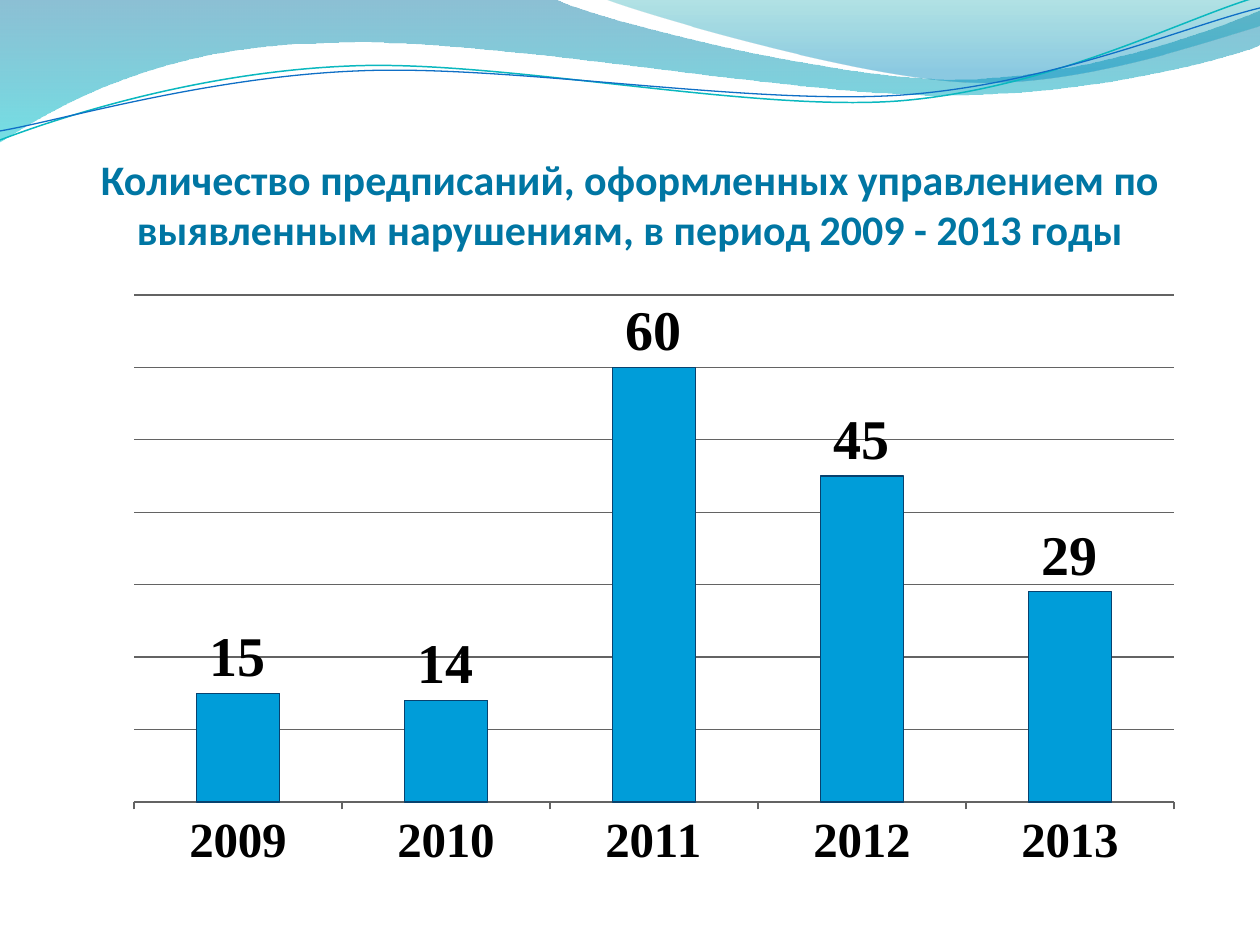
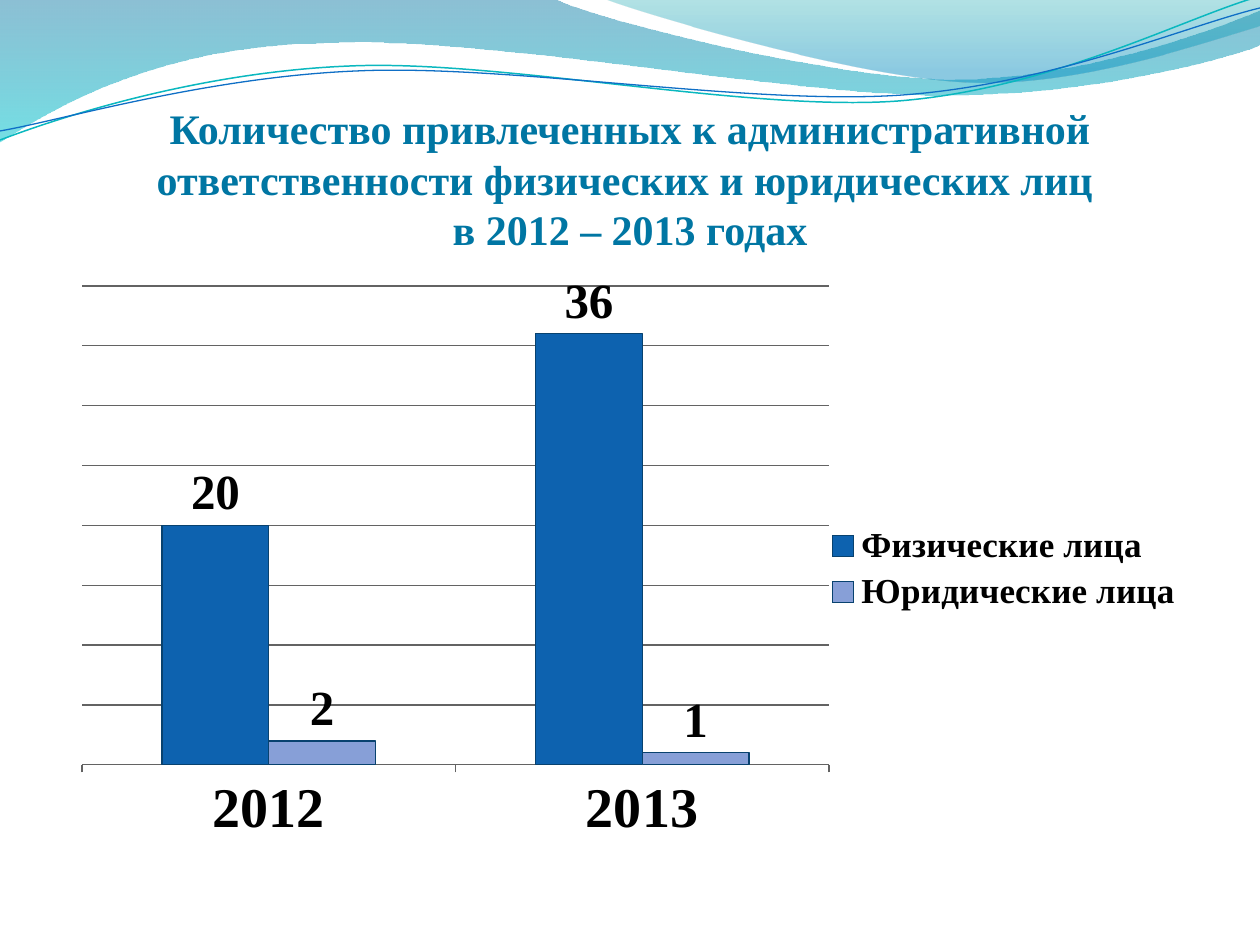
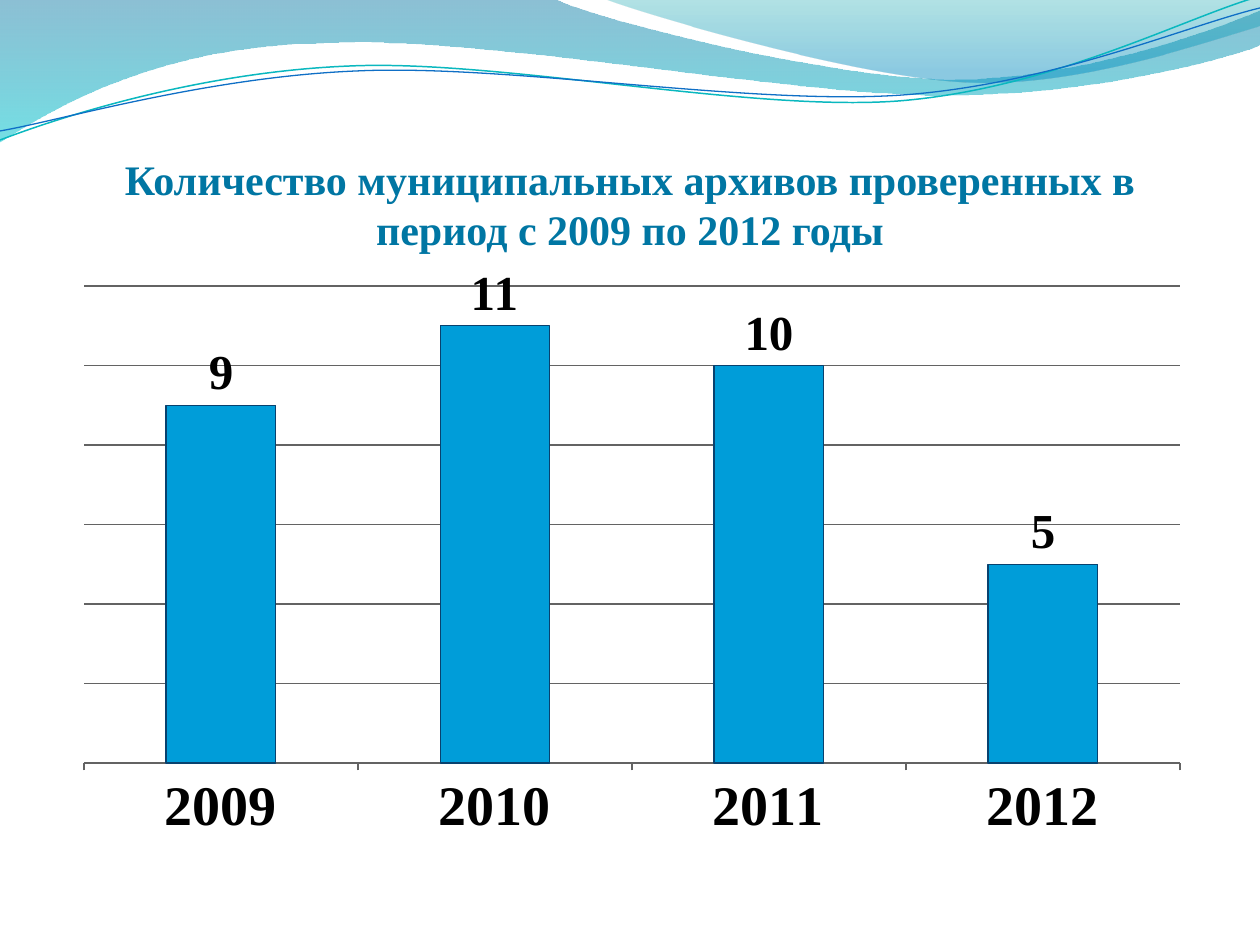
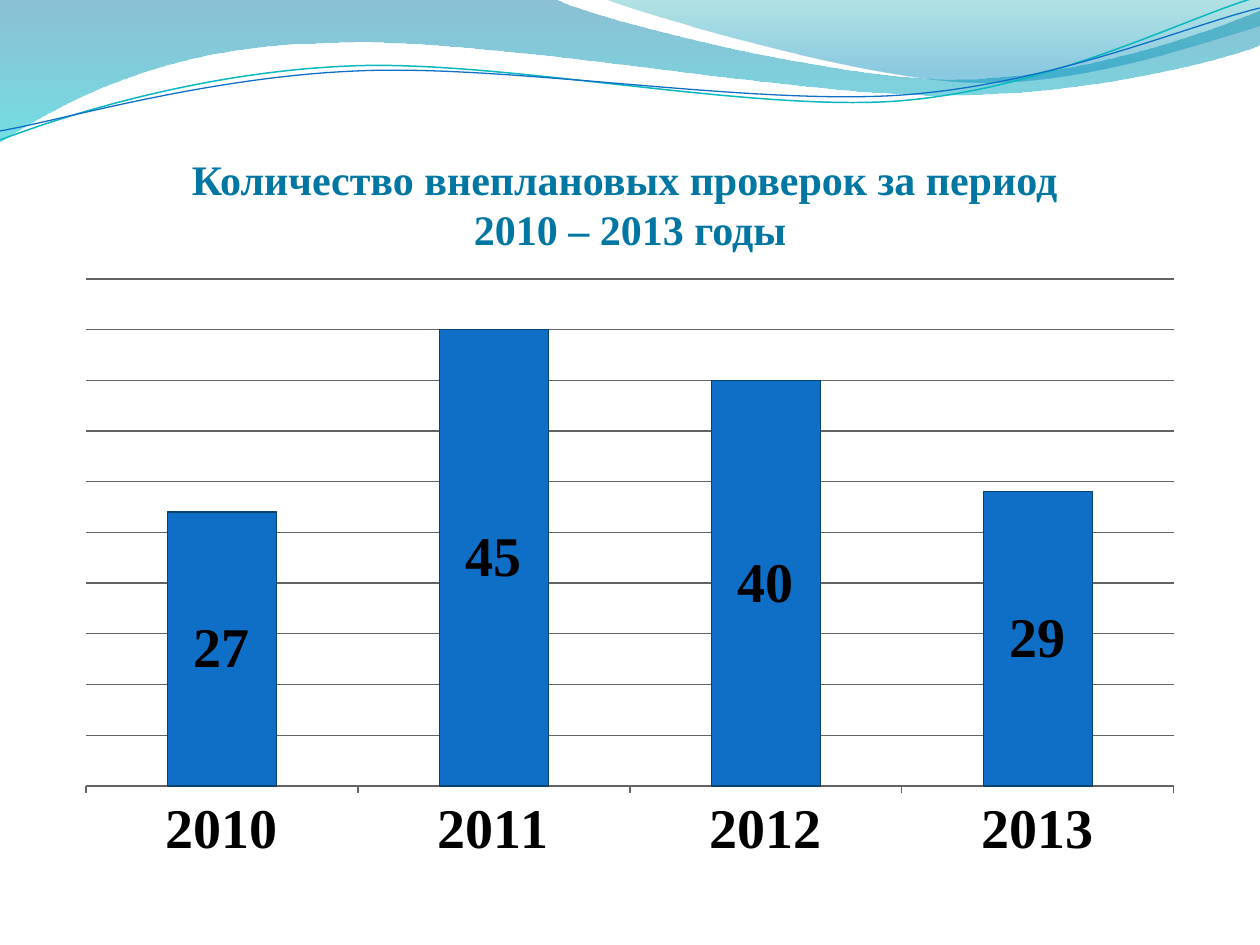
from dataclasses import dataclass

from lxml import etree
from pptx import Presentation
from pptx import util as u
from pptx.chart.data import CategoryChartData
from pptx.dml.color import RGBColor
from pptx.enum import chart as charts
from pptx.enum import text
from pptx.oxml.ns import qn

EMU_PER_PX = 914400 / 126
SLIDE_SIZE = (1260, 945)
TITLE_BOX = (63, 97, 1134, 157)
CHART_BOX = (63, 267, 1134, 604)


@dataclass(frozen=True)
class Theme:
    title: str = "0076A3"
    ink: str = "000000"
    grid: str = "636363"
    bar_edge: str = "08426F"
    sky: str = "009DD9"
    blue: str = "0F6FC6"
    deep_blue: str = "0D62AF"
    lilac: str = "879FD7"
    teal: str = "0AB8BF"
    serif: str = "Times New Roman"
    sans: str = "Calibri"
    chart_font: str = "Vollkorn"
    title_size: int = 24
    chart_size: int = 18
    legend_size: int = 20
    medium: int = 28
    large: int = 32
    hairline: float = 0.75


THEME = Theme()

# Each wave is a start point and cubic segments (two handles and an end).
# A segment holding a single point is a straight line.
BACK_WAVE = [
    (0, 0), [(554, -1)],
    [(600, 21), (837, 79), (955, 79)], [(1075, 79), (1207, 33), (1260, 11)],
    [(1261, 45)],
    [(1239, 55), (1096, 96), (940, 95)], [(784, 95), (481, 35), (324, 43)],
    [(163, 45), (58, 105), (-1, 142)],
]
FRONT_WAVE = [
    (604, -1), [(641, 14), (859, 78), (969, 82)],
    [(1079, 87), (1211, 40), (1260, 26)], [(1260, 0)],
]
TEAL_LINE = [
    (0, 140), [(60, 117), (199, 72), (349, 66)],
    [(498, 59), (747, 112), (898, 101)], [(1050, 89), (1182, 19), (1257, -3)],
]
BLUE_LINE = [
    (0, 131), [(59, 121), (207, 77), (357, 71)],
    [(508, 64), (752, 106), (903, 95)], [(1053, 84), (1186, 26), (1260, 8)],
]


def px(length):
    return u.Emu(round(length * EMU_PER_PX))


def rgb(value):
    return RGBColor.from_string(value)


def set_font(font, name, size, color=THEME.ink, bold=True):
    font.name, font.size, font.bold = name, u.Pt(size), bold
    font.color.rgb = rgb(color)


def set_line(line, color, width=THEME.hairline):
    line.color.rgb = rgb(color)
    line.width = u.Pt(width)


def add_outline(slide, outline, close):
    """Build a polygon through all points, then bend its cubic segments."""
    start, *segments = outline
    points = [(px(x), px(y)) for segment in segments for x, y in segment]
    builder = slide.shapes.build_freeform(*map(px, start), scale=1.0)
    builder.add_line_segments(points, close=close)
    shape = builder.convert_to_shape()
    shape.shadow.inherit = False
    lines = shape.element.spPr.iter(qn("a:lnTo"))
    steps = iter(list(lines))
    for segment in segments:
        members = [next(steps) for _ in segment]
        if len(members) == 3:
            curve = etree.Element(qn("a:cubicBezTo"))
            members[0].addprevious(curve)
            for member in members:
                curve.append(member[0])
                member.getparent().remove(member)
    return shape


def add_wave(slide, outline, stops):
    """Stops are (position, colour, opacity in percent), from top to bottom."""
    shape = add_outline(slide, outline, close=True)
    shape.line.fill.background()
    shape.fill.gradient()
    shape.fill.gradient_angle = 270
    for stop, (position, color, _) in zip(shape.fill.gradient_stops, stops):
        stop.position = position
        stop.color.rgb = rgb(color)
    colors = shape.element.spPr.iter(qn("a:srgbClr"))
    for element, (_, _, opacity) in zip(colors, stops):
        etree.SubElement(element, qn("a:alpha"), val=str(opacity * 1000))
    return shape


def add_wave_line(slide, outline, color, width):
    shape = add_outline(slide, outline, close=False)
    shape.fill.background()
    set_line(shape.line, color, width)
    return shape


def decorate_layout(layout, slide):
    """Draw the wave band on a slide, then move it behind all of its layout."""
    band = [
        add_wave(slide, BACK_WAVE, [(0, "0074A1", 45), (1, "00C6CF", 55)]),
        add_wave(slide, FRONT_WAVE, [(0, "00A1A9", 30), (0.8, "008BBF", 45)]),
        add_wave_line(slide, TEAL_LINE, THEME.teal, 0.85),
        add_wave_line(slide, BLUE_LINE, THEME.blue, THEME.hairline),
    ]
    for index, shape in enumerate(band):
        shape.element.nvSpPr.cNvPr.set("id", str(100 + index))
        layout.shapes.element.insert(2 + index, shape.element)


def place_title(slide, box, wording, font_name):
    title = slide.shapes.title
    title.left, title.top, title.width, title.height = map(px, box)
    frame = title.text_frame
    frame.word_wrap = True
    frame.auto_size = text.MSO_AUTO_SIZE.NONE
    frame.vertical_anchor = text.MSO_ANCHOR.BOTTOM
    frame.margin_left = frame.margin_right = frame.margin_bottom = 0
    frame.margin_top = px(6)
    paragraph = frame.paragraphs[0]
    paragraph.text = wording
    paragraph.alignment = text.PP_ALIGN.CENTER
    set_font(paragraph.font, font_name, THEME.title_size, THEME.title)


def set_plot_area(chart, box, chart_box):
    """Fix the inner plot area; box is in px from the chart's corner."""
    plot_area = chart.element.find(f".//{qn('c:plotArea')}")
    layout = plot_area.find(qn("c:layout"))
    if layout is None:
        layout = etree.Element(qn("c:layout"))
        plot_area.insert(0, layout)
    manual = etree.SubElement(layout, qn("c:manualLayout"))
    settings = [("layoutTarget", "inner"), ("xMode", "edge"), ("yMode", "edge")]
    settings += [(key, f"{length / chart_box[2 + index % 2]:.4f}")
                 for index, (key, length) in enumerate(zip("xywh", box))]
    for key, value in settings:
        etree.SubElement(manual, qn(f"c:{key}"), val=value)


def format_axes(chart, category_size, maximum, step):
    category_axis, value_axis = chart.category_axis, chart.value_axis
    category_axis.major_tick_mark = charts.XL_TICK_MARK.OUTSIDE
    set_line(category_axis.format.line, THEME.grid)
    set_font(category_axis.tick_labels.font, THEME.serif, category_size)
    value_axis.visible = False
    value_axis.minimum_scale, value_axis.maximum_scale = 0, maximum
    value_axis.major_unit = step
    value_axis.has_major_gridlines = True
    set_line(value_axis.major_gridlines.format.line, THEME.grid)


def format_series(series, color, label_size, label_position):
    series.format.fill.solid()
    series.format.fill.fore_color.rgb = rgb(color)
    set_line(series.format.line, THEME.bar_edge)
    labels = series.data_labels
    labels.show_value = True
    labels.position = label_position
    set_font(labels.font, THEME.serif, label_size)


def add_column_chart(slide, box, categories, series, colors, plot_box, scale,
                     label_size, category_size=THEME.large, stacked=False):
    data = CategoryChartData()
    data.categories = categories
    for name, values in series.items():
        data.add_series(name, values)
    kind = charts.XL_CHART_TYPE
    chart = slide.shapes.add_chart(
        kind.COLUMN_STACKED if stacked else kind.COLUMN_CLUSTERED,
        *map(px, box), data).chart
    set_font(chart.font, THEME.chart_font, THEME.chart_size, bold=False)
    chart.has_title = False
    plot = chart.plots[0]
    plot.vary_by_categories = False
    plot.gap_width = 150
    plot.overlap = 100 if stacked else 0
    position = charts.XL_LABEL_POSITION
    for column, color in zip(plot.series, colors):
        format_series(column, color, label_size,
                      position.CENTER if stacked else position.OUTSIDE_END)
    format_axes(chart, category_size, *scale)
    set_plot_area(chart, plot_box, box)
    chart.has_legend = len(series) > 1
    if chart.has_legend:
        chart.legend.position = charts.XL_LEGEND_POSITION.RIGHT
        chart.legend.include_in_layout = False
        set_font(chart.legend.font, THEME.serif, THEME.legend_size)


def years(first, last):
    return [str(year) for year in range(first, last + 1)]


SLIDES = [
    ("Количество предписаний, оформленных управлением по выявленным нарушениям, "
     "в период 2009 - 2013 годы", THEME.sans,
     dict(categories=years(2009, 2013), series={"Series 1": [15, 14, 60, 45, 29]},
          colors=[THEME.sky], plot_box=(71, 28, 1040, 507), scale=(70, 10),
          label_size=THEME.large, category_size=THEME.medium)),
    ("Количество привлеченных к административной ответственности физических "
     "и юридических лиц \nв 2012 – 2013 годах", THEME.serif,
     dict(categories=years(2012, 2013),
          series={"Физические лица": [20, 36], "Юридические лица": [2, 1]},
          colors=[THEME.deep_blue, THEME.lilac], plot_box=(19, 19, 747, 479),
          scale=(40, 5), label_size=THEME.medium)),
    ("Количество муниципальных архивов проверенных в период с 2009 по 2012 годы",
     THEME.serif,
     dict(categories=years(2009, 2012), series={"Series 1": [9, 11, 10, 5]},
          colors=[THEME.sky], plot_box=(21, 18, 1096, 478), scale=(12, 2),
          label_size=THEME.medium)),
    ("Количество внеплановых проверок за период \n2010 – 2013 годы", THEME.serif,
     dict(categories=years(2010, 2013), series={"Series 1": [27, 45, 40, 29]},
          colors=[THEME.blue], plot_box=(23, 12, 1088, 507), scale=(50, 5),
          label_size=THEME.large, stacked=True)),
]


def main():
    presentation = Presentation()
    presentation.slide_width, presentation.slide_height = map(px, SLIDE_SIZE)
    layout = presentation.slide_layouts.get_by_name("Title Only")
    for index, (wording, title_font, chart) in enumerate(SLIDES):
        slide = presentation.slides.add_slide(layout)
        if index == 0:
            decorate_layout(layout, slide)
        place_title(slide, TITLE_BOX, wording, title_font)
        add_column_chart(slide, CHART_BOX, **chart)
    presentation.save("out.pptx")


if __name__ == "__main__":
    main()
